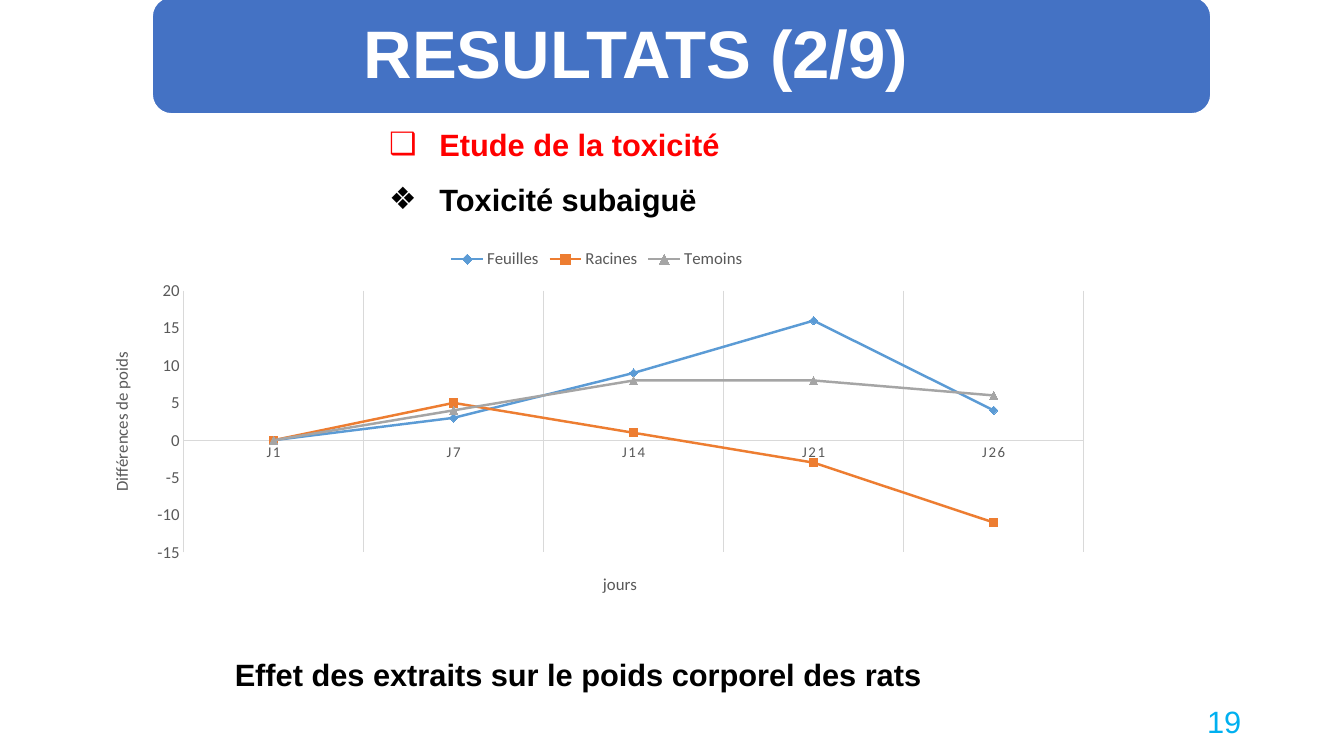
import pptx
import pptx.chart.data
import pptx.dml.color
import pptx.enum.chart
import pptx.enum.shapes
import pptx.enum.text
import pptx.oxml
import pptx.oxml.ns
import pptx.util

Inches = pptx.util.Inches
Pt = pptx.util.Pt
RGBColor = pptx.dml.color.RGBColor
Marker = pptx.enum.chart.XL_MARKER_STYLE
Align = pptx.enum.text.PP_ALIGN
Anchor = pptx.enum.text.MSO_ANCHOR

WHITE = RGBColor(0xFF, 0xFF, 0xFF)
BLACK = RGBColor(0x00, 0x00, 0x00)
RED = RGBColor(0xFF, 0x00, 0x00)
CYAN = RGBColor(0x00, 0xB0, 0xF0)
BANNER_BLUE = RGBColor(0x44, 0x72, 0xC4)
LABEL_GREY = RGBColor(0x59, 0x59, 0x59)
GRID_GREY = RGBColor(0xD9, 0xD9, 0xD9)
LEAF_BLUE = RGBColor(0x5B, 0x9B, 0xD5)
ROOT_ORANGE = RGBColor(0xED, 0x7D, 0x31)
CONTROL_GREY = RGBColor(0xA5, 0xA5, 0xA5)

DAYS = ["J1", "J7", "J14", "J21", "J26"]
WEIGHT_CHANGES = [
    ("Feuilles", [0, 3, 9, 16, 4], LEAF_BLUE, Marker.DIAMOND),
    ("Racines", [0, 5, 1, -3, -11], ROOT_ORANGE, Marker.SQUARE),
    ("Temoins", [0, 4, 8, 8, 6], CONTROL_GREY, Marker.TRIANGLE),
]


def set_font(font, size, color, name="Arial", bold=False):
    font.name, font.size, font.bold = name, Pt(size), bold
    font.color.rgb = color


def set_line(line, color, width):
    line.color.rgb = color
    line.width = Pt(width)


def layout_xml(x, y, size=None):
    """Return a manual chart layout in fractions; size marks the inner plot area."""
    values = [("xMode", "edge"), ("yMode", "edge"), ("x", x), ("y", y)]
    if size:
        values = [("layoutTarget", "inner")] + values + [("w", size[0]), ("h", size[1])]
    parts = "".join(f'<c:{tag} val="{value}"/>' for tag, value in values)
    return pptx.oxml.parse_xml(
        f'<c:layout {pptx.oxml.ns.nsdecls("c")}><c:manualLayout>{parts}'
        "</c:manualLayout></c:layout>")


def place_chart_part(element, layout):
    for old_layout in element.xpath("c:layout"):
        element.remove(old_layout)
    texts = element.xpath("c:tx")
    if texts:
        texts[0].addnext(layout)
    else:
        element.insert(0, layout)


class ResultSlide:
    def __init__(self, presentation):
        self.slide = presentation.slides.add_slide(presentation.slide_layouts[5])
        self.shapes = self.slide.shapes

    def banner_title(self, text):
        banner = self.shapes.add_shape(
            pptx.enum.shapes.MSO_SHAPE.ROUNDED_RECTANGLE,
            Inches(1.51), Inches(-0.03), Inches(10.5), Inches(1.16))
        banner.shadow.inherit = False
        banner.fill.solid()
        banner.fill.fore_color.rgb = BANNER_BLUE
        set_line(banner.line, WHITE, 1)

        title = self.shapes.title
        title.element.addprevious(banner.element)
        title.left, title.top = Inches(1.32), Inches(0.04)
        title.width, title.height = Inches(10.35), Inches(1.05)
        frame = title.text_frame
        frame.text = text
        frame.auto_size = pptx.enum.text.MSO_AUTO_SIZE.NONE
        frame.vertical_anchor = Anchor.MIDDLE
        frame.margin_left = frame.margin_top = frame.margin_bottom = Inches(0.26)
        frame.margin_right = Inches(0.63)
        paragraph = frame.paragraphs[0]
        paragraph.alignment = Align.CENTER
        paragraph.line_spacing = 0.9
        set_font(paragraph.font, 48, WHITE, bold=True)

    def text(self, box, text, color, bold=False, align=Align.LEFT, anchor=Anchor.TOP):
        frame = self.shapes.add_textbox(*map(Inches, box)).text_frame
        frame.word_wrap = True
        frame.vertical_anchor = anchor
        paragraph = frame.paragraphs[0]
        paragraph.text = text
        paragraph.alignment = align
        set_font(paragraph.font, 22, color, bold=bold)

    def headings(self, box, items):
        frame = self.shapes.add_textbox(*map(Inches, box)).text_frame
        frame.word_wrap = True
        for index, (bullet, text, color) in enumerate(items):
            paragraph = frame.add_paragraph() if index else frame.paragraphs[0]
            paragraph.text = text
            paragraph.line_spacing = 1.5
            set_font(paragraph.font, 22, color, bold=True)
            properties = paragraph._p.get_or_add_pPr()
            properties.set("marL", str(Inches(0.5)))
            properties.set("indent", str(Inches(-0.5)))
            run_defaults = properties.xpath("a:defRPr")[0]
            for mark in ('buFont {} typeface="Arial"', f'buChar {{}} char="{bullet}"'):
                run_defaults.addprevious(pptx.oxml.parse_xml(
                    f'<a:{mark.format(pptx.oxml.ns.nsdecls("a"))}/>'))

    def axis(self, axis, title, title_at, label_size):
        axis.has_title = True
        frame = axis.axis_title.text_frame
        frame.text = title
        set_font(frame.paragraphs[0].font, 12, LABEL_GREY, "Calibri")
        place_chart_part(axis.axis_title._element, layout_xml(*title_at))
        set_font(axis.tick_labels.font, label_size, LABEL_GREY, "Calibri")
        axis.major_tick_mark = axis.minor_tick_mark = pptx.enum.chart.XL_TICK_MARK.NONE
        set_line(axis.format.line, GRID_GREY, 0.75)

    def line_chart(self, box, categories, series_rows):
        data = pptx.chart.data.CategoryChartData()
        data.categories = categories
        for name, values, _, _ in series_rows:
            data.add_series(name, values)
        chart = self.shapes.add_chart(
            pptx.enum.chart.XL_CHART_TYPE.LINE_MARKERS, *map(Inches, box), data).chart
        set_font(chart.font, 10, BLACK, "Calibri")
        chart.has_title = False
        chart.has_legend = True
        chart.legend.position = pptx.enum.chart.XL_LEGEND_POSITION.TOP
        chart.legend.include_in_layout = False
        set_font(chart.legend.font, 12, LABEL_GREY, "Calibri")

        plot = chart.plots[0]
        plot.vary_by_categories = False
        for series, (_, _, color, marker) in zip(plot.series, series_rows):
            series.smooth = False
            set_line(series.format.line, color, 1.75)
            series.marker.style, series.marker.size = marker, 6
            series.marker.format.fill.solid()
            series.marker.format.fill.fore_color.rgb = color
            set_line(series.marker.format.line, color, 0.75)

        days, weights = chart.category_axis, chart.value_axis
        self.axis(days, "jours", (0.503, 0.877), 10.6)
        self.axis(weights, "Différences de poids", (0.017, 0.295), 12)
        days.has_major_gridlines = True
        set_line(days.major_gridlines.format.line, GRID_GREY, 0.75)
        days._element.xpath("c:txPr//a:defRPr")[0].set("spc", "120")
        weights.has_major_gridlines = False
        weights.minimum_scale, weights.maximum_scale = -15, 20
        weights.major_unit = 5
        plot_area = chart._chartSpace.xpath("c:chart/c:plotArea")[0]
        place_chart_part(plot_area, layout_xml(0.0925, 0.14, (0.8875, 0.6925)))


def main():
    presentation = pptx.Presentation()
    presentation.slide_width = Inches(13.33)
    presentation.slide_height = Inches(7.5)
    results = ResultSlide(presentation)
    results.text((2.23, 6.46, 7.19, 0.47),
                 "Effet des extraits sur le poids corporel des rats", BLACK, bold=True)
    results.text((9.41, 6.95, 3, 0.4), "19", CYAN, align=Align.RIGHT, anchor=Anchor.MIDDLE)
    results.headings((3.76, 1.01, 4.12, 1.58), [
        ("❑", "Etude de la toxicité", RED),
        ("❖", "Toxicité subaiguë", BLACK),
    ])
    results.banner_title("RESULTATS (2/9)")
    results.line_chart((0.89, 2.36, 10.06, 3.75), DAYS, WEIGHT_CHANGES)
    presentation.save("out.pptx")


if __name__ == "__main__":
    main()
